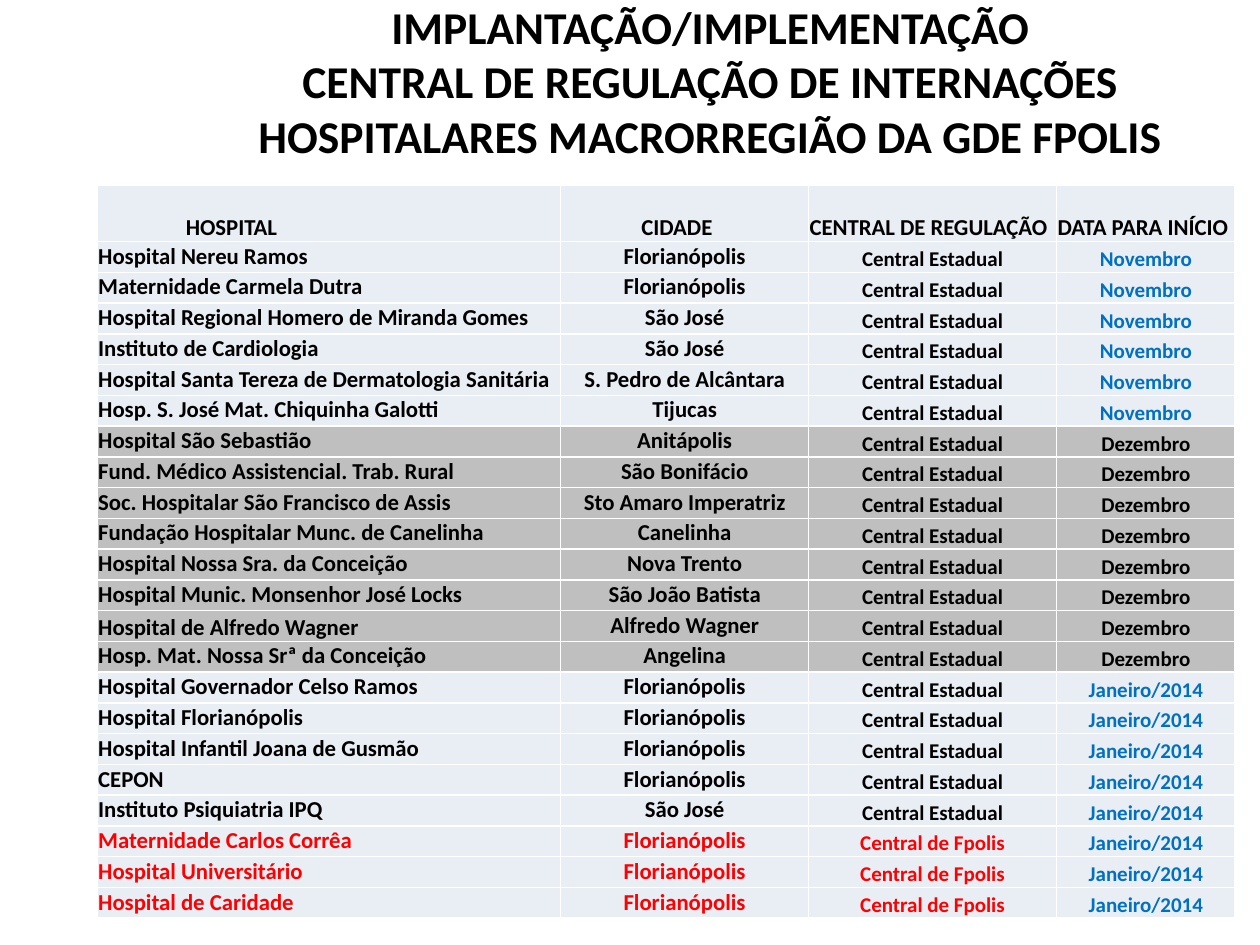
from dataclasses import dataclass

from pptx import Presentation
from pptx import util as u
from pptx.dml import color
from pptx.enum import text

FONT = "Calibri"
COLORS = {
    "black": "000000",
    "blue": "0070C0",
    "red": "FF0000",
    "light": "E9EDF4",
    "gray": "BFBFBF",
}
LEFT, CENTER = text.PP_ALIGN.LEFT, text.PP_ALIGN.CENTER
TOP, BOTTOM = text.MSO_ANCHOR.TOP, text.MSO_ANCHOR.BOTTOM

TITLE = [
    "IMPLANTAÇÃO/IMPLEMENTAÇÃO",
    "CENTRAL DE REGULAÇÃO DE INTERNAÇÕES HOSPITALARES MACRORREGIÃO DA GDE FPOLIS",
]
COLUMN_WIDTHS = [9.34, 5, 5, 3.6]
HEADER_HEIGHT, ROW_HEIGHT = 1.14, 0.62
CELL_MARGIN = 0.02
# Label, alignment and right margin in cm
HEADERS = [
    ("HOSPITAL", CENTER, 3.95),
    ("CIDADE", CENTER, 0.33),
    ("CENTRAL DE REGULAÇÃO", LEFT, CELL_MARGIN),
    ("DATA PARA INÍCIO", LEFT, CELL_MARGIN),
]
LOW_SET_HOSPITAL = "Hospital de Alfredo Wagner"


@dataclass
class Stage:
    """Hospitals that share a regulation centre and a start date."""
    center: str
    start: str
    hospitals: list
    fill: str = "light"
    ink: str = "black"
    start_ink: str = "blue"


STAGES = [
    Stage("Central Estadual", "Novembro", [
        ("Hospital Nereu Ramos", "Florianópolis"),
        ("Maternidade Carmela Dutra", "Florianópolis"),
        ("Hospital Regional Homero de Miranda Gomes", "São José"),
        ("Instituto de Cardiologia", "São José"),
        ("Hospital Santa Tereza de Dermatologia Sanitária", "S. Pedro de Alcântara"),
        ("Hosp. S. José Mat. Chiquinha Galotti", "Tijucas"),
    ]),
    Stage("Central Estadual", "Dezembro", [
        ("Hospital São Sebastião", "Anitápolis"),
        ("Fund. Médico Assistencial. Trab. Rural", "São Bonifácio"),
        ("Soc. Hospitalar São Francisco de Assis", "Sto Amaro Imperatriz"),
        ("Fundação Hospitalar Munc. de Canelinha", "Canelinha"),
        ("Hospital Nossa Sra. da Conceição", "Nova Trento"),
        ("Hospital Munic. Monsenhor José Locks", "São João Batista"),
        (LOW_SET_HOSPITAL, "Alfredo Wagner"),
        ("Hosp. Mat. Nossa Srª da Conceição", "Angelina"),
    ], fill="gray", start_ink="black"),
    Stage("Central Estadual", "Janeiro/2014", [
        ("Hospital Governador Celso Ramos", "Florianópolis"),
        ("Hospital Florianópolis", "Florianópolis"),
        ("Hospital Infantil Joana de Gusmão", "Florianópolis"),
        ("CEPON", "Florianópolis"),
        ("Instituto Psiquiatria IPQ", "São José"),
    ]),
    Stage("Central de Fpolis", "Janeiro/2014", [
        ("Maternidade Carlos Corrêa", "Florianópolis"),
        ("Hospital Universitário", "Florianópolis"),
        ("Hospital de Caridade", "Florianópolis"),
    ], ink="red"),
]


def rgb(name):
    return color.RGBColor.from_string(COLORS[name])


def format_para(para, size, ink="black", align=CENTER):
    para.alignment = align
    para.font.name = FONT
    para.font.size = u.Pt(size)
    para.font.bold = True
    para.font.color.rgb = rgb(ink)


def fill_title(title):
    title.left, title.top = u.Cm(3.76), u.Cm(0.33)
    title.width, title.height = u.Cm(21.13), u.Cm(2.59)
    frame = title.text_frame
    frame.text = "\n".join(TITLE)
    frame.word_wrap = True
    frame.auto_size = text.MSO_AUTO_SIZE.NONE
    frame.vertical_anchor = text.MSO_ANCHOR.MIDDLE
    for para in frame.paragraphs:
        format_para(para, 26)


def fill_cell(cell, label, size=13, ink="black", fill="light", align=CENTER,
              anchor=BOTTOM, right=CELL_MARGIN):
    cell.text = label
    cell.vertical_anchor = anchor
    cell.margin_left = cell.margin_top = u.Cm(CELL_MARGIN)
    cell.margin_right, cell.margin_bottom = u.Cm(right), 0
    cell.fill.solid()
    cell.fill.fore_color.rgb = rgb(fill)
    format_para(cell.text_frame.paragraphs[0], size, ink, align)


def fill_hospital_row(cells, stage, hospital, city):
    name_cell, city_cell, center_cell, start_cell = cells
    name_anchor = BOTTOM if hospital == LOW_SET_HOSPITAL else TOP
    fill_cell(name_cell, hospital, 13, stage.ink, stage.fill, LEFT, name_anchor)
    fill_cell(city_cell, city, 13, stage.ink, stage.fill, anchor=TOP)
    fill_cell(center_cell, stage.center, 12, stage.ink, stage.fill)
    fill_cell(start_cell, stage.start, 12, stage.start_ink, stage.fill)


def add_schedule(slide):
    entries = [(stage, *pair) for stage in STAGES for pair in stage.hospitals]
    height = HEADER_HEIGHT + ROW_HEIGHT * len(entries)
    table = slide.shapes.add_table(
        len(entries) + 1, len(HEADERS), u.Cm(1.96), u.Cm(3.73),
        u.Cm(sum(COLUMN_WIDTHS)), u.Cm(height)).table
    table.first_row = table.horz_banding = False
    for column, width in zip(table.columns, COLUMN_WIDTHS):
        column.width = u.Cm(width)

    header_row, *hospital_rows = table.rows
    header_row.height = u.Cm(HEADER_HEIGHT)
    for cell, (label, align, right) in zip(header_row.cells, HEADERS):
        fill_cell(cell, label, align=align, right=right)
    for row, entry in zip(hospital_rows, entries):
        row.height = u.Cm(ROW_HEIGHT)
        fill_hospital_row(row.cells, *entry)


def main():
    deck = Presentation()
    deck.slide_width, deck.slide_height = u.Cm(25.4), u.Cm(19.05)
    slide = deck.slides.add_slide(deck.slide_layouts.get_by_name("Title Only"))
    fill_title(slide.shapes.title)
    add_schedule(slide)
    deck.save("out.pptx")


if __name__ == "__main__":
    main()
